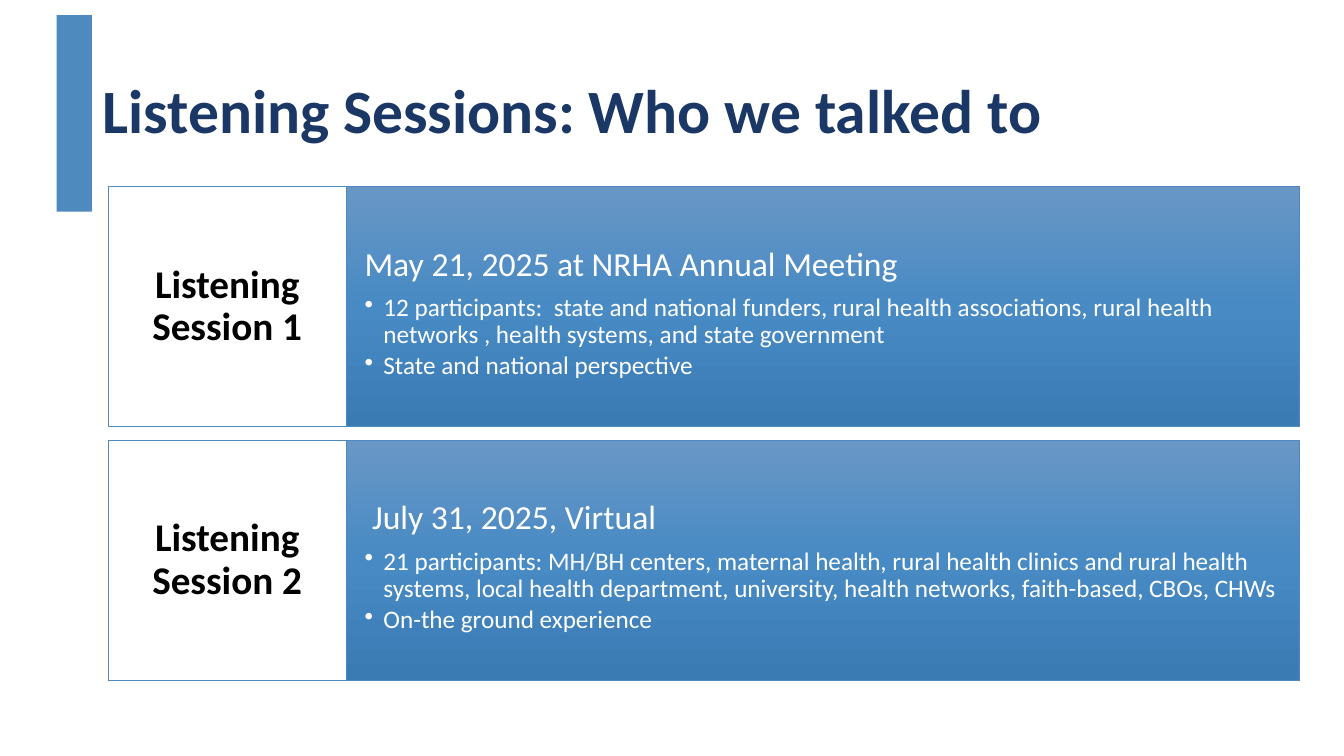
"""Builds the slide on who joined the two listening sessions."""
from copy import deepcopy

from pptx import Presentation
from pptx import util as u
from pptx.dml.color import RGBColor
from pptx.enum import shapes, text
from pptx.oxml import ns, xmlchemy as xc

Pt = u.Pt
BLUE = RGBColor(0x4E, 0x8A, 0xBE)
NAVY = RGBColor(0x1A, 0x37, 0x65)
WHITE = RGBColor(0xFF, 0xFF, 0xFF)
BLACK = RGBColor(0, 0, 0)
FADE = (RGBColor(0x68, 0x97, 0xC6), RGBColor(0x48, 0x8A, 0xC4), RGBColor(0x3A, 0x7B, 0xB4))

LEFT, TOP, STEP, HIGH = 77.2, 133.2, 181.4, 171.4
SIDE, MAIN = 170.2, 681
SESSIONS = [
    ("Listening Session 1", "May 21, 2025 at NRHA Annual Meeting", [
        "12 participants:  state and national funders, rural health associations, "
        "rural health networks , health systems, and state government",
        "State and national perspective"]),
    ("Listening Session 2", " July 31, 2025, Virtual", [
        "21 participants: MH/BH centers, maternal health, rural health clinics and rural "
        "health systems, local health department, university, health networks, "
        "faith-based, CBOs, CHWs",
        "On-the ground experience"]),
]


def write(para, words, size=18, color=WHITE, bold=False, after=0,
          align=text.PP_ALIGN.LEFT, bullet=False):
    para.text = words
    para.alignment = align
    para.line_spacing = 0.9
    para.space_before = Pt(0)
    para.space_after = Pt(after)
    if bullet:
        props = para._p.get_or_add_pPr()
        props.set("marL", str(Pt(13.5)))
        props.set("indent", str(Pt(-13.5)))
        mark = xc.OxmlElement("a:buChar")
        mark.set("char", "•")
        props.append(mark)
    font = para.font
    font.name, font.size, font.bold = "Calibri", Pt(size), bold
    font.color.rgb = color


class Deck:
    def __init__(self, font_color=NAVY):
        self.prs = Presentation()
        self.prs.slide_width, self.prs.slide_height = Pt(960), Pt(540)
        self.slide = self.prs.slides.add_slide(self.prs.slide_layouts[6])
        self.color = font_color

    def frame(self, shape, anchor, side, edge):
        frame = shape.text_frame
        frame.word_wrap = True
        frame.vertical_anchor = anchor
        frame.margin_left = frame.margin_right = Pt(side)
        frame.margin_top = frame.margin_bottom = Pt(edge)
        return frame

    def title(self, words):
        box = self.slide.shapes.add_textbox(Pt(66.2), Pt(28.8), Pt(828), Pt(104.4))
        frame = self.frame(box, text.MSO_ANCHOR.MIDDLE, 7.2, 3.6)
        write(frame.paragraphs[0], words, size=44, color=self.color, bold=True)

    def rect(self, left, top, width, height, fill=BLUE, line=None):
        box = self.slide.shapes.add_shape(
            shapes.MSO_SHAPE.RECTANGLE, Pt(left), Pt(top), Pt(width), Pt(height))
        box.shadow.inherit = False
        if isinstance(fill, RGBColor):
            box.fill.solid()
            box.fill.fore_color.rgb = fill
        else:
            self.fade(box, fill)
        if line:
            box.line.color.rgb = line
            box.line.width = Pt(0.5)
        else:
            box.line.fill.background()
        return box

    def fade(self, box, colors):
        box.fill.gradient()
        box.fill.gradient_angle = 270
        stops = box._element.spPr.find(".//" + ns.qn("a:gsLst"))
        stops.insert(1, deepcopy(stops[0]))
        for i, (stop, color) in enumerate(zip(box.fill.gradient_stops, colors)):
            stop.position = i / (len(colors) - 1)
            stop.color.rgb = color

    def label(self, top, words):
        box = self.rect(LEFT, top, SIDE, HIGH, WHITE, BLUE)
        frame = self.frame(box, text.MSO_ANCHOR.MIDDLE, 9.4, 17.3)
        write(frame.paragraphs[0], words, size=28, color=BLACK, bold=True,
              after=9.8, align=text.PP_ALIGN.CENTER)

    def panel(self, top, head, points):
        box = self.rect(LEFT + SIDE, top, MAIN, HIGH, FADE, BLUE)
        frame = self.frame(box, text.MSO_ANCHOR.TOP, 13, 43.2)
        write(frame.paragraphs[0], head, size=24, after=8.4)
        for point in points:
            write(frame.add_paragraph(), point, after=2.7, bullet=True)


def main():
    deck = Deck()
    deck.rect(40.5, 10.8, 25.2, 140.4)
    deck.title("Listening Sessions: Who we talked to")
    for row, (name, head, points) in enumerate(SESSIONS):
        top = TOP + row * STEP
        deck.panel(top, head, points)
        deck.label(top, name)
    deck.prs.save("out.pptx")


if __name__ == "__main__":
    main()
